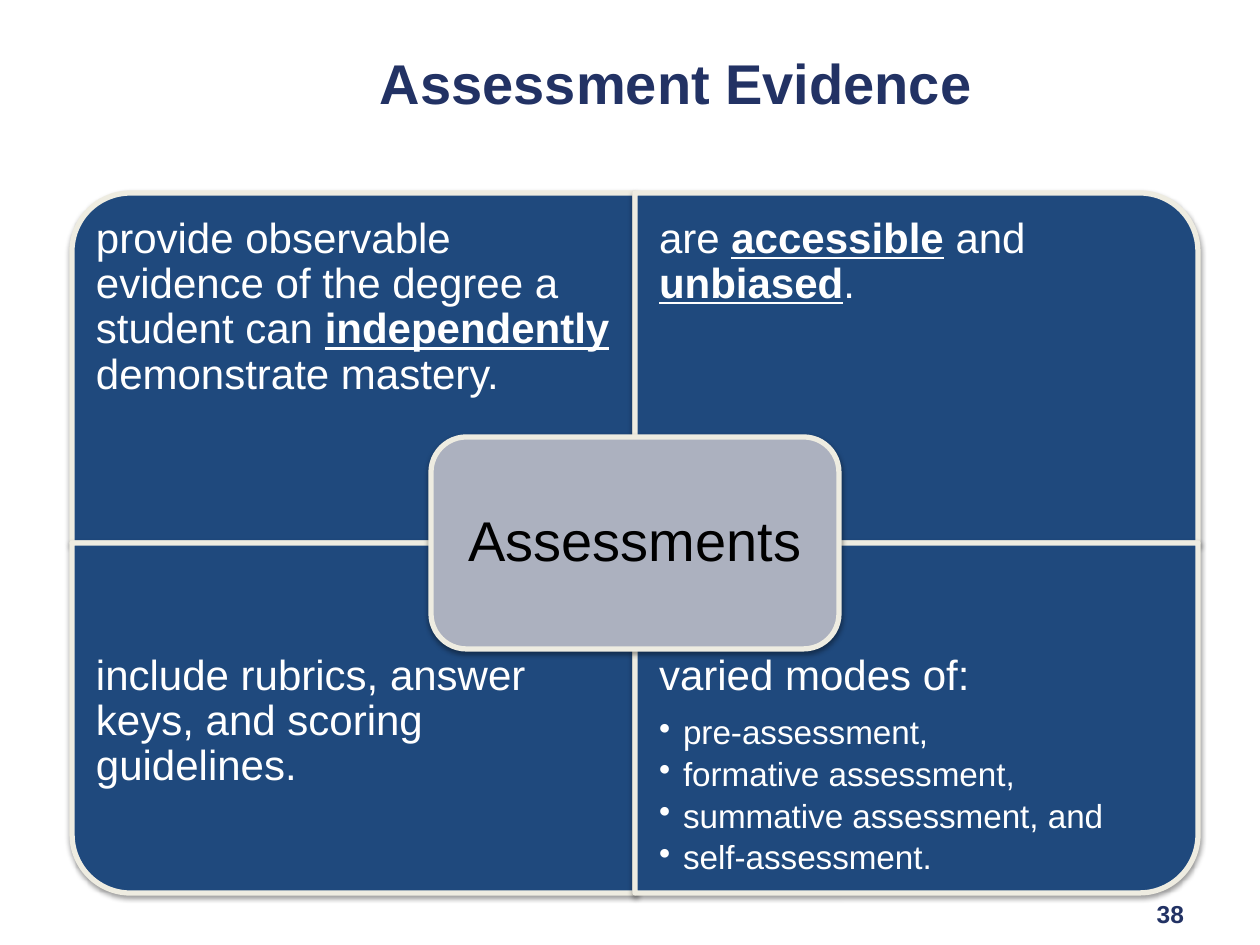
from lxml import etree
from pptx import Presentation
from pptx.dml.color import RGBColor
from pptx.enum.shapes import MSO_SHAPE as Shape
from pptx.enum.text import MSO_ANCHOR as Anchor, PP_ALIGN as Align
from pptx.oxml import parse_xml
from pptx.oxml.ns import nsdecls, qn
from pptx.util import Emu, Pt

PX = 914400 / 126
NAVY, BLUE, CREAM, GREY, WHITE, BLACK = "223264", "1F497D", "EEECE1", "ACB1BF", "FFFFFF", "000000"
STRONG = {"bold": True, "underline": True}
PLAIN = {"bold": False, "underline": False}


def px(n):
    """Turn pixels into EMU."""
    return Emu(round(n * PX))


def rgb(value):
    """Turn a hex string into a colour."""
    return RGBColor.from_string(value)


def set_all(obj, values):
    """Set each attribute named in a dict."""
    for name, value in values.items():
        setattr(obj, name, value)


def set_frame(tf, inset, anchor=Anchor.TOP):
    """Give a text frame its wrapping, anchor and equal insets."""
    set_all(tf, {"word_wrap": True, "vertical_anchor": anchor})
    set_all(tf, {f"margin_{side}": px(inset) for side in ("left", "top", "right", "bottom")})


def add_runs(p, runs, size, colour, **fmt):
    """Add (text, format) runs to a paragraph."""
    for text, extra in runs:
        r = p.add_run()
        r.text = text
        set_all(r.font, {"name": "Arial", "size": Pt(size), **fmt, **extra})
        r.font.color.rgb = rgb(colour)


def add_textbox(s, box, inset, anchor=Anchor.TOP):
    """Add a wrapping text box and return its frame."""
    tf = s.shapes.add_textbox(*map(px, box)).text_frame
    set_frame(tf, inset, anchor)
    return tf


def add_panel(s, kind, box, fill, turn=0):
    """Add an outlined, shadowed panel that covers the box after its turn."""
    x, y, w, h = box
    if turn % 180:
        x, y, w, h = x + (w - h) / 2, y + (h - w) / 2, h, w
    sp = s.shapes.add_shape(kind, *map(px, (x, y, w, h)))
    sp.rotation = turn
    sp.fill.solid()
    sp.fill.fore_color.rgb = rgb(fill)
    sp.line.color.rgb = rgb(CREAM)
    sp.line.width = Pt(3)
    sp.shadow.inherit = False
    effects = sp._element.spPr.find(qn("a:effectLst"))
    effects.append(parse_xml(
        f'<a:outerShdw {nsdecls("a")} blurRad="{Pt(3.1)}" dist="{Pt(1.6)}" dir="5400000" rotWithShape="0">'
        f'<a:srgbClr val="{BLACK}"><a:alpha val="38000"/></a:srgbClr></a:outerShdw>'))


def add_bullet(p, indent):
    """Give a paragraph a hanging round bullet."""
    pPr = p._p.get_or_add_pPr()
    pPr.set("marL", str(px(indent)))
    pPr.set("indent", str(-px(indent)))
    etree.SubElement(pPr, qn("a:buChar")).set("char", "•")


def add_quadrant(s, box, turn, text_top, runs, bullets=()):
    """Add one quarter of the matrix with its text."""
    x, y, w, h = box
    add_panel(s, Shape.ROUND_1_RECTANGLE, box, BLUE, turn)
    tf = add_textbox(s, (x, y + text_top, w, 262), 24)
    p = tf.paragraphs[0]
    set_all(p, {"line_spacing": 0.9, "space_after": Pt(9.7)})
    add_runs(p, runs, 24, WHITE)
    for text in bullets:
        p = tf.add_paragraph()
        set_all(p, {"level": 1, "line_spacing": 0.9, "space_after": Pt(3.3)})
        add_bullet(p, 24)
        add_runs(p, [(text, {})], 19, WHITE)


def add_matrix(s, box):
    """Add four quadrants around a central label."""
    x, y, w, h = box
    cw, ch = w / 2, h / 2
    quadrants = [
        (270, [("provide observable evidence of the degree a student can ", PLAIN),
               ("independently", STRONG), (" demonstrate mastery.", PLAIN)], ()),
        (0, [("are ", PLAIN), ("accessible", STRONG), (" and ", PLAIN),
             ("unbiased", STRONG), (".", PLAIN)], ()),
        (180, [("include rubrics, answer keys, and scoring guidelines.", PLAIN)], ()),
        (90, [("varied modes of:", PLAIN)],
         ("pre-assessment,", "formative assessment,", "summative assessment, and", "self-assessment.")),
    ]
    for i, (turn, runs, bullets) in enumerate(quadrants):
        row, col = divmod(i, 2)
        add_quadrant(s, (x + col * cw, y + row * ch, cw, ch), turn, row * 87, runs, bullets)
    lw, lh = 408, 212
    label = (x + cw - lw / 2, y + ch - lh / 2, lw, lh)
    add_panel(s, Shape.ROUNDED_RECTANGLE, label, GREY)
    p = add_textbox(s, label, 26, Anchor.MIDDLE).paragraphs[0]
    set_all(p, {"alignment": Align.CENTER, "line_spacing": 0.9})
    add_runs(p, [("Assessments", {})], 32, BLACK)


def add_title(s, box):
    """Place and format the title placeholder."""
    sp = s.shapes.title
    set_all(sp, dict(zip(("left", "top", "width", "height"), map(px, box))))
    set_frame(sp.text_frame, 12, Anchor.MIDDLE)
    p = sp.text_frame.paragraphs[0]
    p.alignment = Align.LEFT
    add_runs(p, [("Assessment Evidence", {})], 32, NAVY, bold=True)


def add_page_number(s, box):
    """Add the page number at the lower right."""
    p = add_textbox(s, box, 6).paragraphs[0]
    p.alignment = Align.RIGHT
    add_runs(p, [("38", {})], 14, NAVY, bold=True)


def main():
    """Build and save the slide."""
    prs = Presentation()
    set_all(prs, {"slide_width": px(1260), "slide_height": px(945)})
    s = prs.slides.add_slide(prs.slide_layouts[5])
    add_title(s, (368, 42, 829, 80))
    add_page_number(s, (903, 893, 287, 43))
    add_matrix(s, (72, 193, 1126, 700))
    prs.save("out.pptx")


if __name__ == "__main__":
    main()
